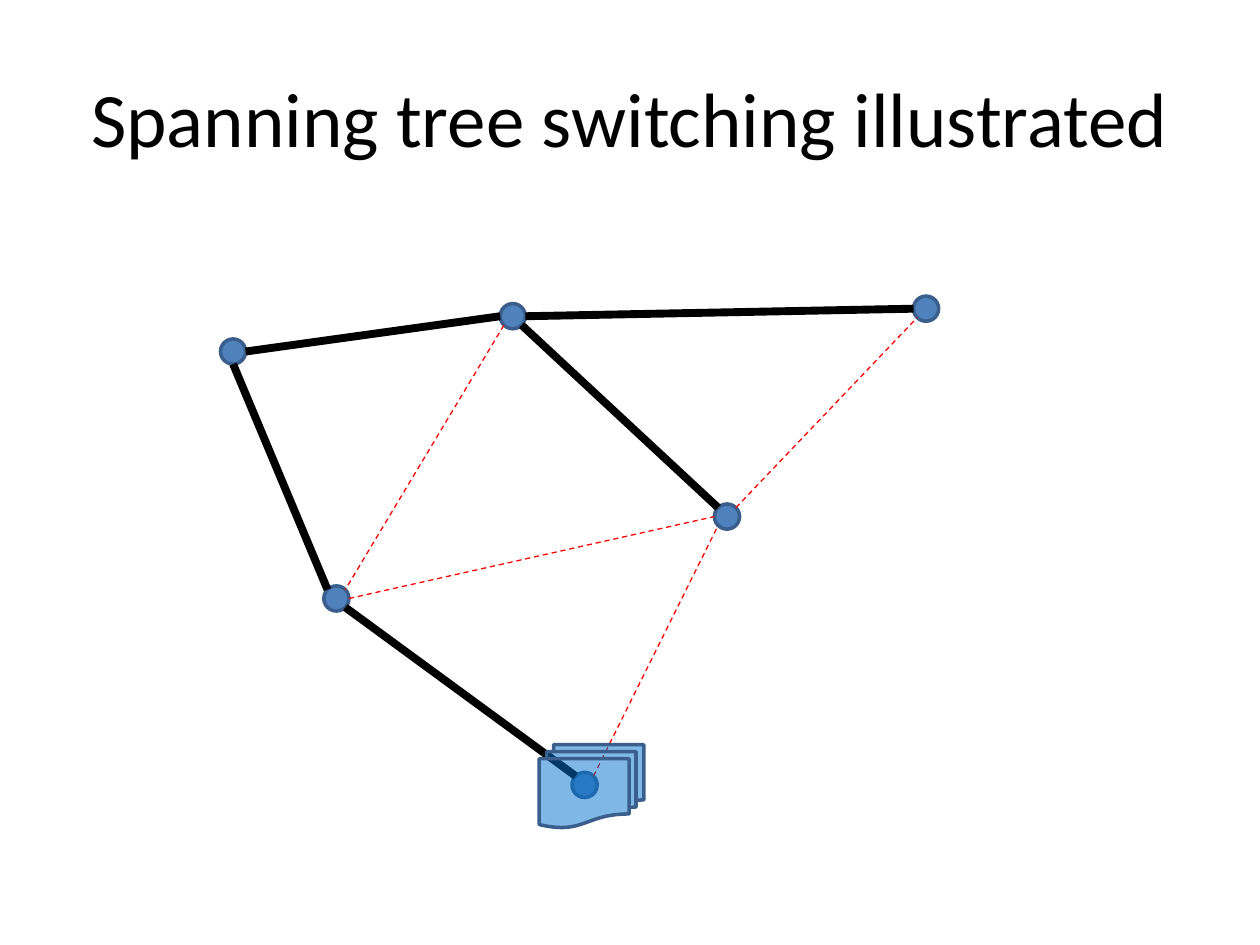
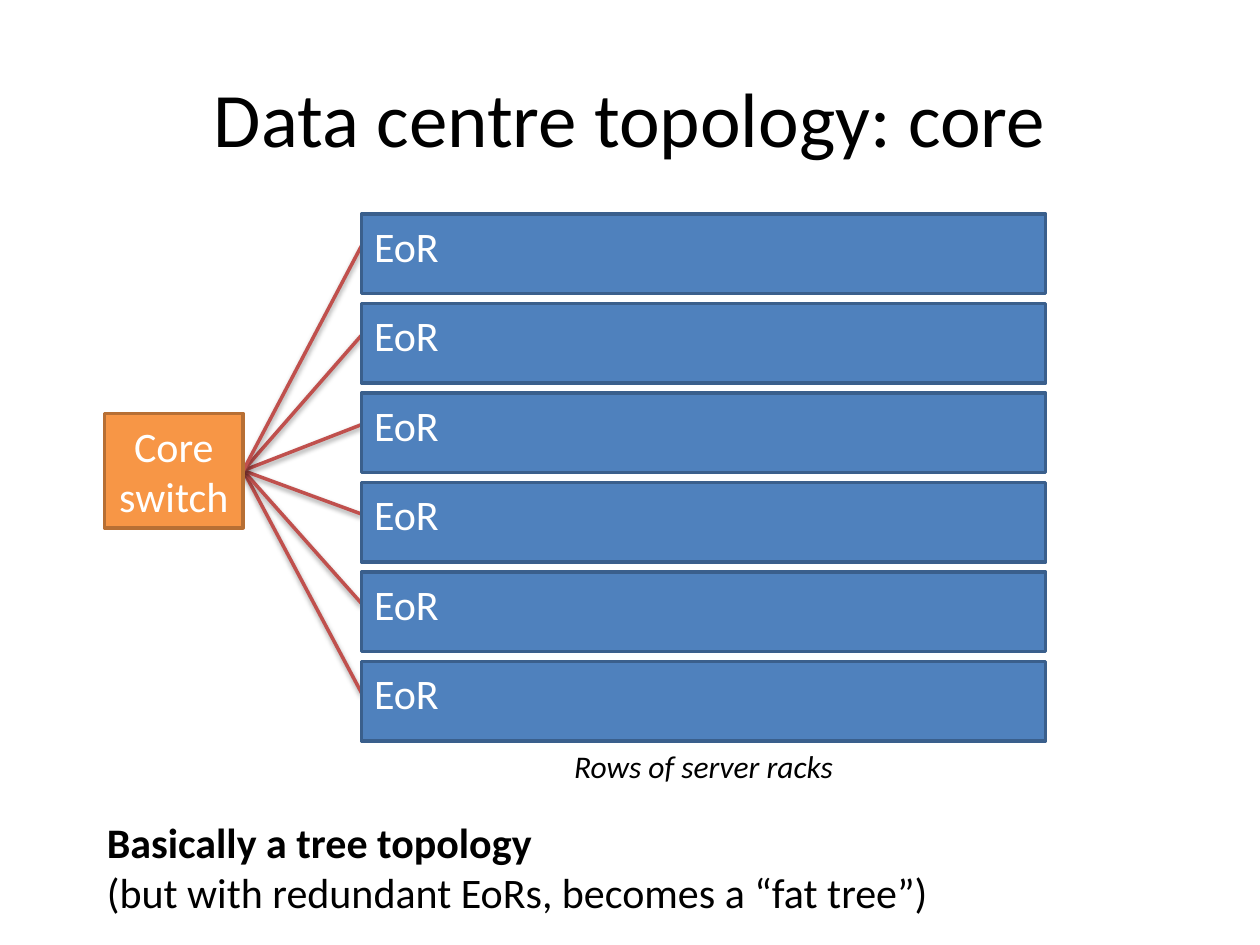
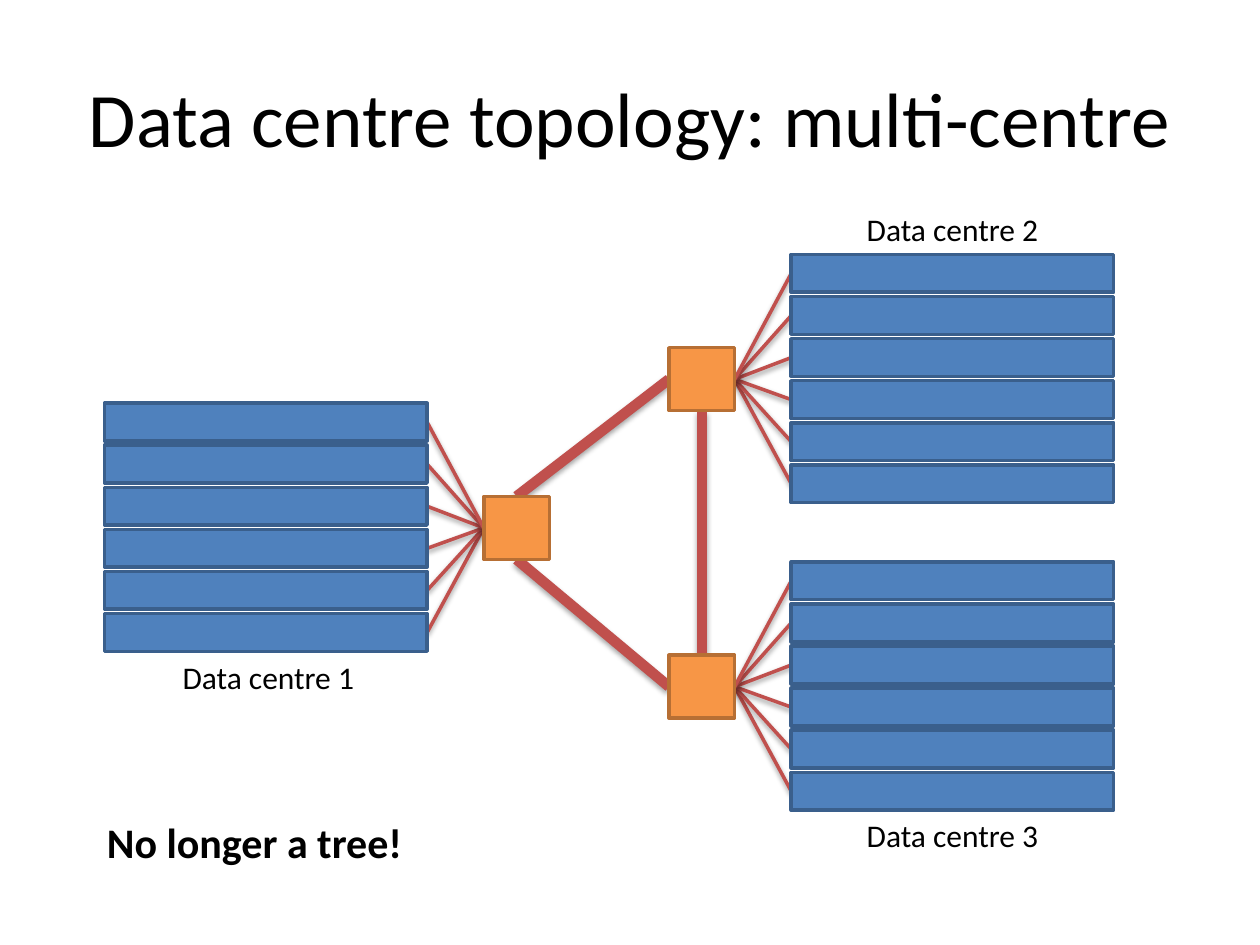
import math

import lxml.etree
import pptx
import pptx.dml.color
import pptx.enum.dml
import pptx.enum.shapes
import pptx.enum.text
import pptx.oxml
import pptx.oxml.ns
import pptx.util

Inches = pptx.util.Inches
Pt = pptx.util.Pt
SHAPE = pptx.enum.shapes.MSO_SHAPE
ALIGN = pptx.enum.text.PP_ALIGN
DASH = pptx.enum.dml.MSO_LINE.DASH

FONT = "Calibri"
BLACK, WHITE, RED = "000000", "FFFFFF", "FF0000"
BLUE, BLUE_EDGE, PAPER = "4F81BD", "3A5F8C", "0073CF"
ORANGE, ORANGE_EDGE, CABLE = "F79646", "B76F34", "C0504D"
TOP, LEFT, BOTTOM, RIGHT = range(4)
RACKS = 6


def colour(hex_text):
    return pptx.dml.color.RGBColor.from_string(hex_text)


def set_all(target, values):
    for name, value in values.items():
        setattr(target, name, value)


class Deck:
    """Holds the shared style and the slide being drawn."""

    def __init__(self):
        self.prs = pptx.Presentation()
        self.prs.slide_width, self.prs.slide_height = Inches(10), Inches(7.5)
        self.slide = None

    def new_slide(self, title):
        self.slide = self.prs.slides.add_slide(self.prs.slide_layouts[5])
        heading = self.slide.shapes.title
        set_all(heading, {"left": Inches(0.5), "top": Inches(0.3),
                          "width": Inches(9), "height": Inches(1.25)})
        heading.text_frame.vertical_anchor = pptx.enum.text.MSO_ANCHOR.MIDDLE
        self.fill_text(heading, [(title, {})], 44, align=ALIGN.CENTER)

    def fill_text(self, holder, runs, size, hex_text=BLACK, align=ALIGN.LEFT):
        """Put in runs of (text, font values), one to a line."""
        holder.text_frame.word_wrap = True
        paragraph = holder.text_frame.paragraphs[0]
        paragraph.alignment = align
        for index, (text, values) in enumerate(runs):
            if index:
                paragraph.add_line_break()
            run = paragraph.add_run()
            run.text = text
            set_all(run.font, {"name": FONT, "size": Pt(size), **values})
            run.font.color.rgb = colour(hex_text)

    def text(self, at, runs, size, **style):
        box = self.slide.shapes.add_textbox(*map(Inches, at))
        box.text_frame.auto_size = pptx.enum.text.MSO_AUTO_SIZE.SHAPE_TO_FIT_TEXT
        self.fill_text(box, runs, size, **style)
        return box

    def shape(self, kind, at, fill=BLUE, edge=BLUE_EDGE, opacity=None):
        shape = self.slide.shapes.add_shape(kind, *map(Inches, at))
        shape.shadow.inherit = False
        shape.fill.solid()
        shape.fill.fore_color.rgb = colour(fill)
        shape.line.color.rgb = colour(edge)
        shape.line.width = Pt(2)
        if opacity:
            tint = shape._element.spPr.find(".//" + pptx.oxml.ns.qn("a:srgbClr"))
            lxml.etree.SubElement(tint, pptx.oxml.ns.qn("a:alpha"), val=str(opacity * 1000))
        return shape

    def line(self, start, end, hex_text, width, dash=None):
        line = self.slide.shapes.add_connector(
            pptx.enum.shapes.MSO_CONNECTOR.STRAIGHT, *map(Inches, (*start, *end)))
        line.line.color.rgb = colour(hex_text)
        set_all(line.line, {"width": Pt(width), "dash_style": dash})
        lxml.etree.SubElement(line._element.spPr, pptx.oxml.ns.qn("a:effectLst"))
        return line

    def cable(self, start, start_side, end, end_side, width=2, distance=1.6, opacity=38):
        """Join two boxes with a shadowed line that lies behind them."""
        cable = self.line((0, 0), (0, 0), CABLE, width)
        cable.begin_connect(start, start_side)
        cable.end_connect(end, end_side)
        effects = cable._element.spPr.find(pptx.oxml.ns.qn("a:effectLst"))
        effects.append(pptx.oxml.parse_xml(
            f'<a:outerShdw {pptx.oxml.ns.nsdecls("a")} blurRad="{Pt(3.1)}" '
            f'dist="{Pt(distance)}" dir="5400000" rotWithShape="0"><a:srgbClr val="{BLACK}">'
            f'<a:alpha val="{opacity * 1000}"/></a:srgbClr></a:outerShdw>'))
        self.slide.shapes._spTree.insert(2, cable._element)

    def racks(self, left, top, width, height, pitch):
        return [self.shape(SHAPE.RECTANGLE, (left, top + row * pitch, width, height))
                for row in range(RACKS)]

    def core(self, *at):
        return self.shape(SHAPE.RECTANGLE, at, ORANGE, ORANGE_EDGE)


def spanning_tree(deck):
    deck.new_slide("Spanning tree switching illustrated")
    radius = 0.1
    nodes = {"source": (4.64, 6.23), "east": (5.77, 4.1), "far east": (7.35, 2.45),
             "north": (4.07, 2.51), "south west": (2.67, 4.75), "west": (1.85, 2.79)}
    for x, y in nodes.values():
        deck.shape(SHAPE.FLOWCHART_CONNECTOR, (x - radius, y - radius, 2 * radius, 2 * radius))

    def rim(node, degrees):
        """Point on a node's edge, clockwise from the right."""
        x, y = nodes[node]
        angle = math.radians(degrees)
        return x + radius * math.cos(angle), y + radius * math.sin(angle)

    tree = {"hex_text": BLACK, "width": 4.5}
    unused = {"hex_text": RED, "width": 0.75, "dash": DASH}
    for start, start_angle, end, end_angle, style in [
            ("west", 0, "north", 180, tree),
            ("north", 0, "far east", 180, tree),
            ("east", 315, "far east", 135, unused),
            ("north", 45, "east", 225, tree),
            ("south west", 225, "west", 90, tree),
            ("north", 135, "south west", 315, unused),
            ("south west", 0, "east", 180, unused),
            ("south west", 45, "source", 225, tree),
            ("source", 315, "east", 135, unused)]:
        deck.line(rim(start, start_angle), rim(end, end_angle), **style)
    deck.shape(SHAPE.FLOWCHART_MULTIDOCUMENT, (4.28, 5.91, 0.83, 0.66), PAPER, opacity=50)


def core_topology(deck):
    deck.new_slide("Data centre topology: core")
    left, top, width, pitch = 2.87, 1.7, 5.43, 0.71
    deck.racks(left, top, width, 0.63, pitch)
    core = deck.core(0.83, 3.28, 1.1, 0.91)
    deck.fill_text(core, [("Core switch", {})], 24, WHITE, ALIGN.CENTER)
    for row in range(RACKS):
        end_of_row = deck.text((left, top + row * pitch, 0.79, 0.5), [("EoR", {})], 24,
                               hex_text=WHITE)
        deck.cable(core, RIGHT, end_of_row, LEFT)
    deck.text((left, 5.88, width, 0.4), [("Rows of server racks", {"italic": True})], 18,
              align=ALIGN.CENTER)
    deck.text((0.75, 6.43, 8.35, 0.91),
              [("Basically a tree topology", {"bold": True}),
               ("(but with redundant EoRs, becomes a “fat tree”)", {})], 24)


def multi_centre(deck):
    deck.new_slide("Data centre topology: multi-centre")
    cores = []
    for number, rack_left, top, core_left, core_side, rack_side, label_left, label_top in [
            (1, 0.83, 3.2, 3.84, LEFT, RIGHT, 0.83, 5.17),
            (2, 6.28, 2.02, 5.31, RIGHT, LEFT, 6.26, 1.62),
            (3, 6.28, 4.46, 5.31, RIGHT, LEFT, 6.26, 6.43)]:
        racks = deck.racks(rack_left, top, 2.56, 0.3, 1.67 / (RACKS - 1))
        core = deck.core(core_left, top + 0.74, 0.52, 0.5)
        for rack in racks:
            deck.cable(core, core_side, rack, rack_side)
        deck.text((label_left, label_top, 2.6, 0.4), [(f"Data centre {number}", {})], 18,
                  align=ALIGN.CENTER)
        cores.append(core)
    first, second, third = cores
    for ends in [(first, TOP, second, LEFT), (second, BOTTOM, third, TOP),
                 (third, LEFT, first, BOTTOM)]:
        deck.cable(*ends, width=6, distance=1.8, opacity=35)
    deck.text((0.75, 6.43, 8.35, 0.5), [("No longer a tree!", {"bold": True})], 24)


def main():
    deck = Deck()
    spanning_tree(deck)
    core_topology(deck)
    multi_centre(deck)
    deck.prs.save("out.pptx")


if __name__ == "__main__":
    main()
